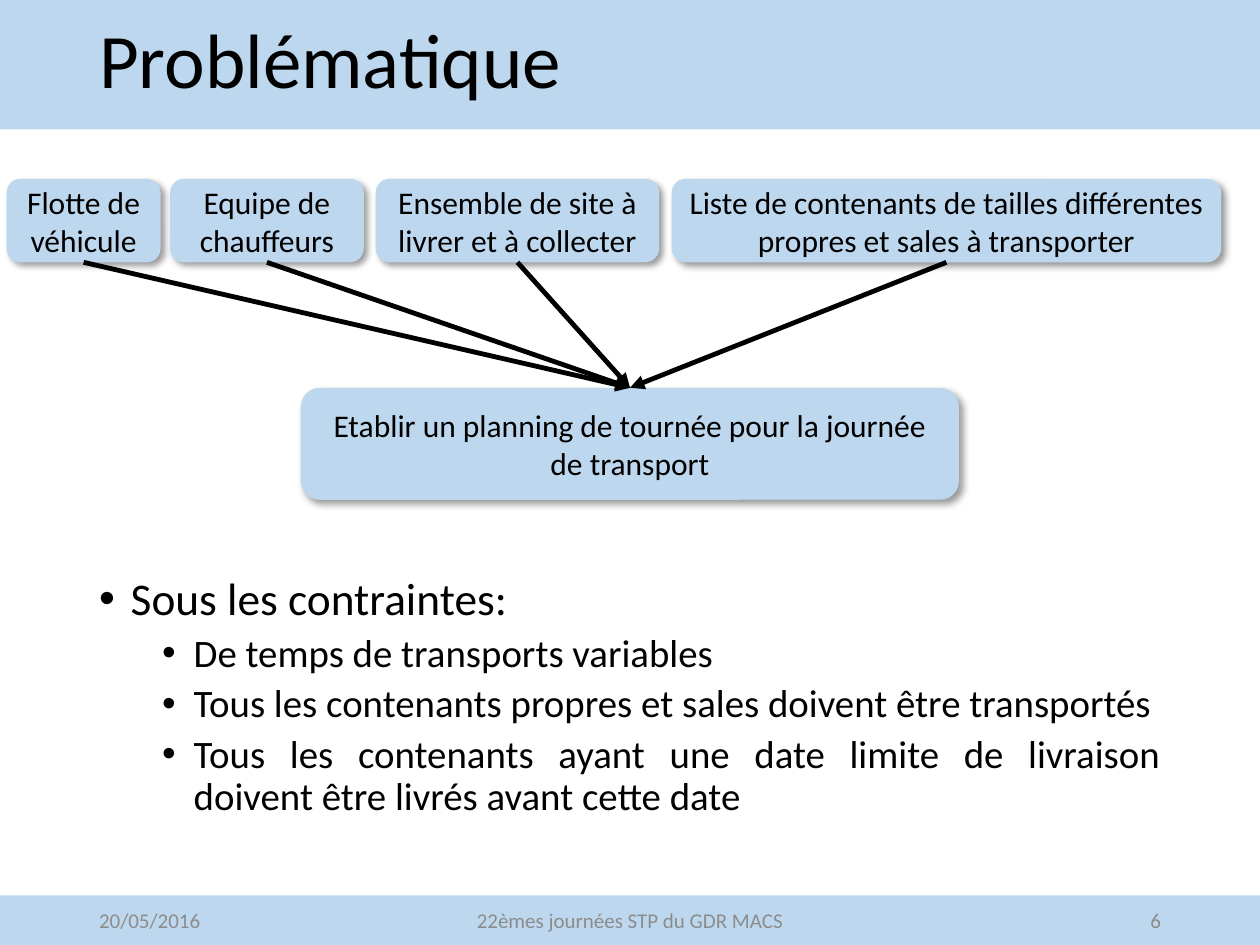
from dataclasses import dataclass

import pptx
import pptx.dml.color
import pptx.enum.shapes
import pptx.enum.text
import pptx.oxml
import pptx.oxml.ns
import pptx.util
from pptx.util import Pt

ALIGN = pptx.enum.text.PP_ALIGN
MIDDLE = pptx.enum.text.MSO_ANCHOR.MIDDLE
SHAPE = pptx.enum.shapes.MSO_SHAPE
NS = pptx.oxml.ns.nsdecls("a")


@dataclass(frozen=True)
class Theme:
    font: str = "Calibri"
    band: str = "BDD7EE"
    ink: str = "000000"
    muted: str = "8C8C8C"
    title: float = 44
    constraint_head: float = 25.9
    constraint: float = 22.2
    box: float = 18
    footer: float = 12


@dataclass(frozen=True)
class Area:
    left: float
    top: float
    width: float
    height: float

    def lengths(self) -> tuple:
        return Pt(self.left), Pt(self.top), Pt(self.width), Pt(self.height)


@dataclass(frozen=True)
class Box:
    text: str
    area: Area


@dataclass(frozen=True)
class FooterItem:
    text: str
    left: float
    width: float
    align: ALIGN


@dataclass(frozen=True)
class Constraint:
    text: str
    level: int
    size: float
    indent: float
    before: float


THEME = Theme()
FOOTER_TOP, FOOTER_HEIGHT = 511.7, 28.5
BANDS = (Area(0, FOOTER_TOP, 720, FOOTER_HEIGHT), Area(0, 0, 720, 74))
TITLE_AREA = Area(49.5, 7.2, 621, 58.5)
BODY_AREA = Area(49.5, 321, 621, 155)
INPUT_TOP, INPUT_HEIGHT = 102.2, 47.7
INPUTS = tuple(
    Box(text, Area(left, INPUT_TOP, width, INPUT_HEIGHT))
    for text, left, width in (
        ("Flotte de véhicule", 3.8, 88),
        ("Equipe de chauffeurs", 97.2, 110.7),
        ("Ensemble de site à livrer et à collecter", 214.7, 162),
        ("Liste de contenants de tailles différentes propres et sales à transporter", 383.8, 314),
    )
)
GOAL = Box(
    "Etablir un planning de tournée pour la journée de transport",
    Area(172, 221.6, 376, 64),
)
CONSTRAINTS = (
    Constraint("Sous les contraintes:", 0, THEME.constraint_head, 18, 10),
    *(
        Constraint(text, 1, THEME.constraint, 54, 5)
        for text in (
            "De temps de transports variables",
            "Tous les contenants propres et sales doivent être transportés",
            "Tous les contenants ayant une date limite de livraison doivent être livrés avant cette date",
        )
    ),
)
FOOTER = (
    FooterItem("20/05/2016", 49.5, 162, ALIGN.LEFT),
    FooterItem("22èmes journées STP du GDR MACS", 238.5, 243, ALIGN.CENTER),
    FooterItem("6", 508.5, 162, ALIGN.RIGHT),
)


def rgb(value: str) -> pptx.dml.color.RGBColor:
    return pptx.dml.color.RGBColor.from_string(value)


def write(paragraph, text: str, size: float, align: ALIGN, color: str = THEME.ink) -> None:
    paragraph.alignment = align
    run = paragraph.add_run()
    run.text = text
    run.font.name = THEME.font
    run.font.size = Pt(size)
    run.font.color.rgb = rgb(color)


def prepare_frame(frame) -> None:
    frame.auto_size = pptx.enum.text.MSO_AUTO_SIZE.NONE
    frame.word_wrap = True
    frame.vertical_anchor = MIDDLE


def place(placeholder, area: Area):
    placeholder.left, placeholder.top, placeholder.width, placeholder.height = area.lengths()
    prepare_frame(placeholder.text_frame)
    return placeholder.text_frame


def add_panel(slide, kind: SHAPE, area: Area):
    panel = slide.shapes.add_shape(kind, *area.lengths())
    panel.shadow.inherit = False
    panel.fill.solid()
    panel.fill.fore_color.rgb = rgb(THEME.band)
    panel.line.fill.background()
    return panel


def add_band(slide, area: Area) -> None:
    band = add_panel(slide, SHAPE.RECTANGLE, area)
    slide.shapes.element.insert(2, band.element)


def add_box(slide, box: Box):
    panel = add_panel(slide, SHAPE.ROUNDED_RECTANGLE, box.area)
    effects = panel.element.spPr.find(pptx.oxml.ns.qn("a:effectLst"))
    effects.append(pptx.oxml.parse_xml(
        f'<a:outerShdw {NS} blurRad="{Pt(4)}" dist="{Pt(3)}" dir="2700000" algn="tl" rotWithShape="0">'
        f'<a:srgbClr val="{THEME.ink}"><a:alpha val="40000"/></a:srgbClr></a:outerShdw>'
    ))
    prepare_frame(panel.text_frame)
    write(panel.text_frame.paragraphs[0], box.text, THEME.box, ALIGN.CENTER)
    return panel


def add_arrow(slide, source, target) -> None:
    top_site, bottom_site = 0, 2
    arrow = slide.shapes.add_connector(pptx.enum.shapes.MSO_CONNECTOR.STRAIGHT, 0, 0, 0, 0)
    arrow.begin_connect(source, bottom_site)
    arrow.end_connect(target, top_site)
    arrow.line.color.rgb = rgb(THEME.ink)
    arrow.line.width = Pt(2.75)
    arrow.line._get_or_add_ln().append(pptx.oxml.parse_xml(f'<a:tailEnd {NS} type="triangle"/>'))
    arrow.element.spPr.append(pptx.oxml.parse_xml(f"<a:effectLst {NS}/>"))


def add_footer(slide, item: FooterItem) -> None:
    area = Area(item.left, FOOTER_TOP, item.width, FOOTER_HEIGHT)
    footer = slide.shapes.add_textbox(*area.lengths())
    prepare_frame(footer.text_frame)
    write(footer.text_frame.paragraphs[0], item.text, THEME.footer, item.align, THEME.muted)


def write_constraint(paragraph, constraint: Constraint) -> None:
    paragraph.level = constraint.level
    paragraph.line_spacing = 0.9
    paragraph.space_before = Pt(constraint.before)
    paragraph.space_after = Pt(0)
    properties = paragraph._p.get_or_add_pPr()
    properties.set("marL", str(Pt(constraint.indent)))
    properties.set("indent", str(Pt(-18)))
    properties.append(pptx.oxml.parse_xml(f'<a:buFont {NS} typeface="Arial"/>'))
    properties.append(pptx.oxml.parse_xml(f'<a:buChar {NS} char="•"/>'))
    write(paragraph, constraint.text, constraint.size, ALIGN.JUSTIFY)


def main() -> None:
    deck = pptx.Presentation()
    deck.slide_width, deck.slide_height = Pt(720), Pt(540)
    slide = deck.slides.add_slide(deck.slide_layouts[1])

    heading = place(slide.shapes.title, TITLE_AREA).paragraphs[0]
    heading.line_spacing = 0.9
    write(heading, "Problématique", THEME.title, ALIGN.LEFT)

    body = place(slide.placeholders[1], BODY_AREA)
    for index, constraint in enumerate(CONSTRAINTS):
        write_constraint(body.add_paragraph() if index else body.paragraphs[0], constraint)

    for band in BANDS:
        add_band(slide, band)
    for item in FOOTER:
        add_footer(slide, item)

    sources = [add_box(slide, box) for box in INPUTS]
    goal = add_box(slide, GOAL)
    for source in sources:
        add_arrow(slide, source, goal)

    deck.save("out.pptx")


if __name__ == "__main__":
    main()
